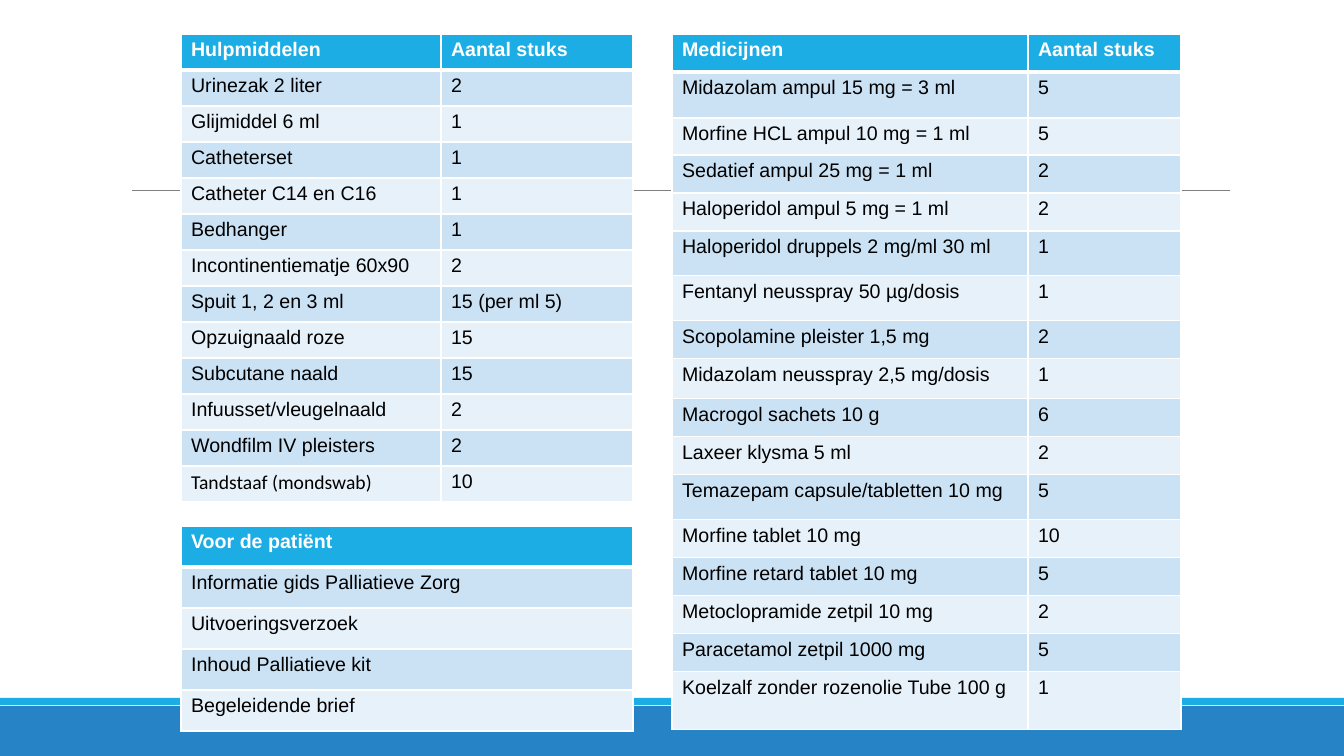
from pptx import Presentation
from pptx.dml.color import RGBColor
from pptx.enum.shapes import MSO_CONNECTOR, MSO_SHAPE
from pptx.oxml.ns import qn
from pptx.util import Pt
from lxml.etree import SubElement

AIDS = [
    ("Hulpmiddelen", "Aantal stuks"),
    ("Urinezak 2 liter", "2"),
    ("Glijmiddel 6 ml", "1"),
    ("Catheterset", "1"),
    ("Catheter C14 en C16", "1"),
    ("Bedhanger", "1"),
    ("Incontinentiematje 60x90", "2"),
    ("Spuit 1, 2 en 3 ml", "15 (per ml 5)"),
    ("Opzuignaald roze", "15"),
    ("Subcutane naald", "15"),
    ("Infuusset/vleugelnaald", "2"),
    ("Wondfilm IV pleisters", "2"),
    ("Tandstaaf (mondswab)", "10"),
]
DRUGS = [
    ("Medicijnen", "Aantal stuks"),
    ("Midazolam ampul 15 mg = 3 ml", "5"),
    ("Morfine HCL ampul 10 mg = 1 ml", "5"),
    ("Sedatief ampul 25 mg = 1 ml", "2"),
    ("Haloperidol ampul 5 mg = 1 ml", "2"),
    ("Haloperidol druppels 2 mg/ml 30 ml", "1"),
    ("Fentanyl neusspray 50 µg/dosis", "1"),
    ("Scopolamine pleister 1,5 mg", "2"),
    ("Midazolam neusspray 2,5 mg/dosis", "1"),
    ("Macrogol sachets 10 g", "6"),
    ("Laxeer klysma 5 ml", "2"),
    ("Temazepam capsule/tabletten 10 mg", "5"),
    ("Morfine tablet 10 mg", "10"),
    ("Morfine retard tablet 10 mg", "5"),
    ("Metoclopramide zetpil 10 mg", "2"),
    ("Paracetamol zetpil 1000 mg", "5"),
    ("Koelzalf zonder rozenolie Tube 100 g", "1"),
]
PATIENT = [
    ("Voor de patiënt",),
    ("Informatie gids Palliatieve Zorg",),
    ("Uitvoeringsverzoek",),
    ("Inhoud Palliatieve kit",),
    ("Begeleidende brief",),
]
DRUG_ROWS = [38, 46, 37, 38, 38, 45, 45, 38, 40, 38, 38, 45, 38, 38, 38, 38, 58]

# left, top, column widths, row heights, content
TABLES = [
    (181, 34, [260, 192], [36] * len(AIDS), AIDS),
    (672, 34, [356, 153], DRUG_ROWS, DRUGS),
    (181, 526, [452], [41] * len(PATIENT), PATIENT),
]
CALIBRI = {"Tandstaaf (mondswab)"}

WIDTH, HEIGHT = 1344, 756
WHITE = RGBColor(0xFF, 0xFF, 0xFF)
BLACK = RGBColor(0, 0, 0)
GREY = RGBColor(0x7F, 0x7F, 0x7F)
BLUE = RGBColor(0x26, 0x83, 0xC6)
CYAN = RGBColor(0x1C, 0xAD, 0xE4)
BANDS = [RGBColor(0xE7, 0xF1, 0xFA), RGBColor(0xCB, 0xE2, 0xF5)]


def px(n):
    return round(n * 914400 / 100.8)


def write(frame, text, font="Arial", size=14, color=BLACK, bold=False):
    run = frame.paragraphs[0].add_run()
    run.text = text
    run.font.name = font
    run.font.size = Pt(size)
    run.font.bold = bold
    run.font.color.rgb = color


def edge(cell, row):
    """Draw white cell borders, thick between the header and the first row."""
    props = cell._tc.get_or_add_tcPr()
    thick = {"lnB": 0, "lnT": 1}
    for tag in ("lnL", "lnR", "lnT", "lnB"):
        width = Pt(3 if thick.get(tag) == row else 1)
        line = SubElement(props, qn("a:" + tag), w=str(width))
        fill = SubElement(line, qn("a:solidFill"))
        SubElement(fill, qn("a:srgbClr"), val=str(WHITE))


def add_grid(slide, left, top, widths, heights, rows):
    grid = slide.shapes.add_table(
        len(rows), len(widths), px(left), px(top),
        px(sum(widths)), px(sum(heights))).table
    grid.horz_banding = False
    for col, width in zip(grid.columns, widths):
        col.width = px(width)
    for r, (texts, height) in enumerate(zip(rows, heights)):
        grid.rows[r].height = px(height)
        head = r == 0
        for c, text in enumerate(texts):
            cell = grid.cell(r, c)
            edge(cell, r)
            cell.fill.solid()
            cell.fill.fore_color.rgb = CYAN if head else BANDS[r % 2]
            write(cell.text_frame, text, bold=head,
                  color=WHITE if head else BLACK,
                  font="Calibri" if text in CALIBRI else "Arial")


def add_bar(slide, top, height, color):
    bar = slide.shapes.add_shape(
        MSO_SHAPE.RECTANGLE, 0, px(top), px(WIDTH), px(height))
    bar.shadow.inherit = False
    bar.fill.solid()
    bar.fill.fore_color.rgb = color
    bar.line.fill.background()


def add_rule(slide, left, right, y):
    rule = slide.shapes.add_connector(
        MSO_CONNECTOR.STRAIGHT, px(left), px(y), px(right), px(y))
    rule.line.color.rgb = GREY
    rule.line.width = Pt(0.75)
    SubElement(rule._element.spPr, qn("a:effectLst"))


def main():
    deck = Presentation()
    deck.slide_width, deck.slide_height = px(WIDTH), px(HEIGHT)
    slide = deck.slides.add_slide(deck.slide_layouts[6])
    add_bar(slide, 706, 50, BLUE)
    add_bar(slide, 698, 7, CYAN)
    add_rule(slide, 132, 1230, 191)
    for table in TABLES:
        add_grid(slide, *table)
    deck.save("out.pptx")


if __name__ == "__main__":
    main()
